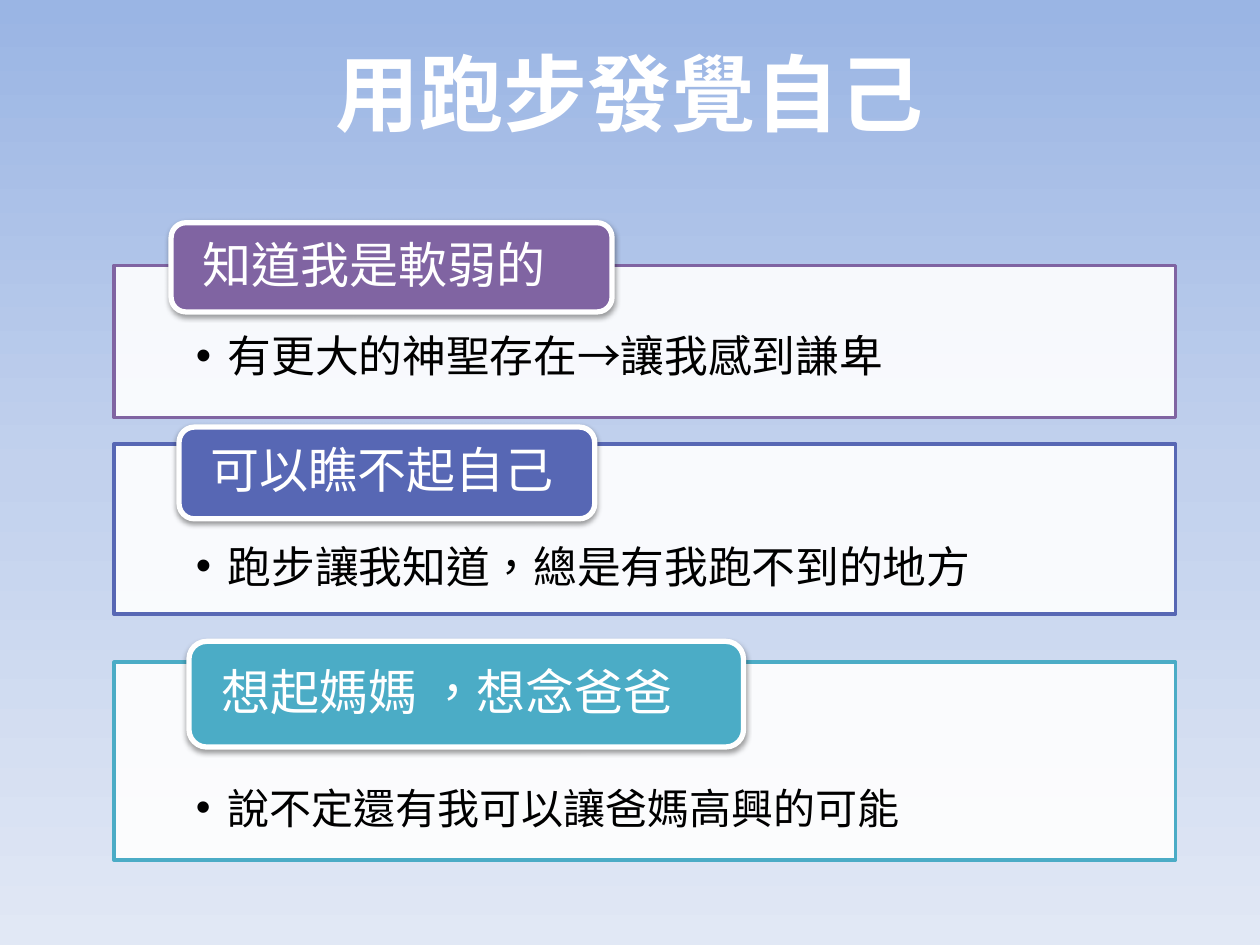
from copy import deepcopy

from lxml.etree import SubElement
from pptx import Presentation
from pptx.dml.color import RGBColor
from pptx.enum.shapes import MSO_SHAPE
from pptx.enum.text import MSO_ANCHOR, PP_ALIGN
from pptx.oxml.ns import qn
from pptx.util import Cm, Pt

PANEL_LEFT, PANEL_WIDTH = 2.3, 21.4
SECTIONS = [
    ("8064A2", (5.35, 3.07), (3.45, 4.49, 8.89, 1.8),
     "知道我是軟弱的", "有更大的神聖存在→讓我感到謙卑", 25, 0.9),
    ("5767B4", (8.95, 3.43), (3.61, 8.61, 8.38, 1.85),
     "可以瞧不起自己", "跑步讓我知道，總是有我跑不到的地方", 25, 1.5),
    ("4BACC6", (13.35, 3.99), (3.81, 12.93, 11.18, 2.13),
     "想起媽媽 ，想念爸爸", "說不定還有我可以讓爸媽高興的可能", 24, 2.0),
]


def color(value):
    return RGBColor.from_string(value)


def add_element(parent, tag, **attributes):
    element = SubElement(parent, qn(tag))
    for name, value in attributes.items():
        element.set(name, str(value))
    return element


class SlideBuilder:
    font_name = "Noto Sans CJK SC"
    language = "zh-TW"
    white = "FFFFFF"
    black = "000000"

    def __init__(self, slide):
        self.slide = slide

    def background(self, colors):
        fill = self.slide.background.fill
        fill.gradient()
        fill.gradient_angle = 270
        first = self.slide._element.find(".//" + qn("a:gs"))
        first.addnext(deepcopy(first))
        for index, (stop, value) in enumerate(zip(fill.gradient_stops, colors)):
            stop.position = index / (len(colors) - 1)
            stop.color.rgb = color(value)

    def text(self, shape, content, size, value, insets=(0.25, 0.13, 0.25, 0.13),
             anchor=MSO_ANCHOR.MIDDLE, align=PP_ALIGN.LEFT, spacing=1.0, bold=False):
        frame = shape.text_frame
        frame.word_wrap = True
        frame.vertical_anchor = anchor
        (frame.margin_left, frame.margin_top,
         frame.margin_right, frame.margin_bottom) = map(Cm, insets)
        paragraph = frame.paragraphs[0]
        paragraph.alignment = align
        paragraph.line_spacing = spacing
        run = paragraph.add_run()
        run.text = content
        run.font.name = self.font_name
        run.font.size = Pt(size)
        run.font.bold = bold
        run.font.color.rgb = color(value)
        properties = run._r.get_or_add_rPr()
        properties.set("lang", self.language)
        add_element(properties, "a:ea", typeface=self.font_name)
        return paragraph

    def box(self, kind, bounds, fill, line, width):
        shape = self.slide.shapes.add_shape(kind, *map(Cm, bounds))
        shape.shadow.inherit = False
        shape.fill.solid()
        shape.fill.fore_color.rgb = color(fill)
        shape.line.color.rgb = color(line)
        shape.line.width = Pt(width)
        return shape

    def title(self, bounds, content):
        shape = self.slide.shapes.add_textbox(*map(Cm, bounds))
        self.text(shape, content, 48, self.white, align=PP_ALIGN.CENTER, bold=True)

    def panel(self, bounds, accent, content, size, spacing):
        shape = self.box(MSO_SHAPE.RECTANGLE, bounds, self.white, accent, 2)
        fill_color = shape._element.spPr.find(qn("a:solidFill"))[0]
        add_element(fill_color, "a:alpha", val=90000)
        paragraph = self.text(shape, content, size, self.black, (1.65, 1.4, 1.65, 0.48),
                              MSO_ANCHOR.TOP, spacing=spacing)
        properties = paragraph._p.get_or_add_pPr()
        properties.set("marL", str(Cm(0.64)))
        properties.set("indent", str(Cm(-0.64)))
        add_element(properties, "a:buFont", typeface="Arial")
        add_element(properties, "a:buChar", char="•")

    def tag(self, bounds, accent, content):
        shape = self.box(MSO_SHAPE.ROUNDED_RECTANGLE, bounds, accent, self.white, 3)
        effects = shape._element.spPr.find(qn("a:effectLst"))
        shadow = add_element(effects, "a:outerShdw", blurRad=Pt(3.1), dist=Pt(1.6),
                             dir=90 * 60000, rotWithShape=0)
        shadow_color = add_element(shadow, "a:srgbClr", val=self.black)
        add_element(shadow_color, "a:alpha", val=38000)
        self.text(shape, content, 28, self.white, (0.55, 0, 0.2, 0), spacing=0.9)


def main():
    presentation = Presentation()
    presentation.slide_width = Cm(25.4)
    presentation.slide_height = Cm(19.05)
    builder = SlideBuilder(presentation.slides.add_slide(presentation.slide_layouts[6]))
    builder.background(["9AB5E4", "C2D1ED", "E1E8F5"])
    for accent, (top, height), tag_bounds, heading, detail, size, spacing in SECTIONS:
        builder.panel((PANEL_LEFT, top, PANEL_WIDTH, height), accent, detail, size, spacing)
        builder.tag(tag_bounds, accent, heading)
    builder.title((1.27, 0.74, 22.86, 2.21), "用跑步發覺自己")
    presentation.save("out.pptx")


if __name__ == "__main__":
    main()
